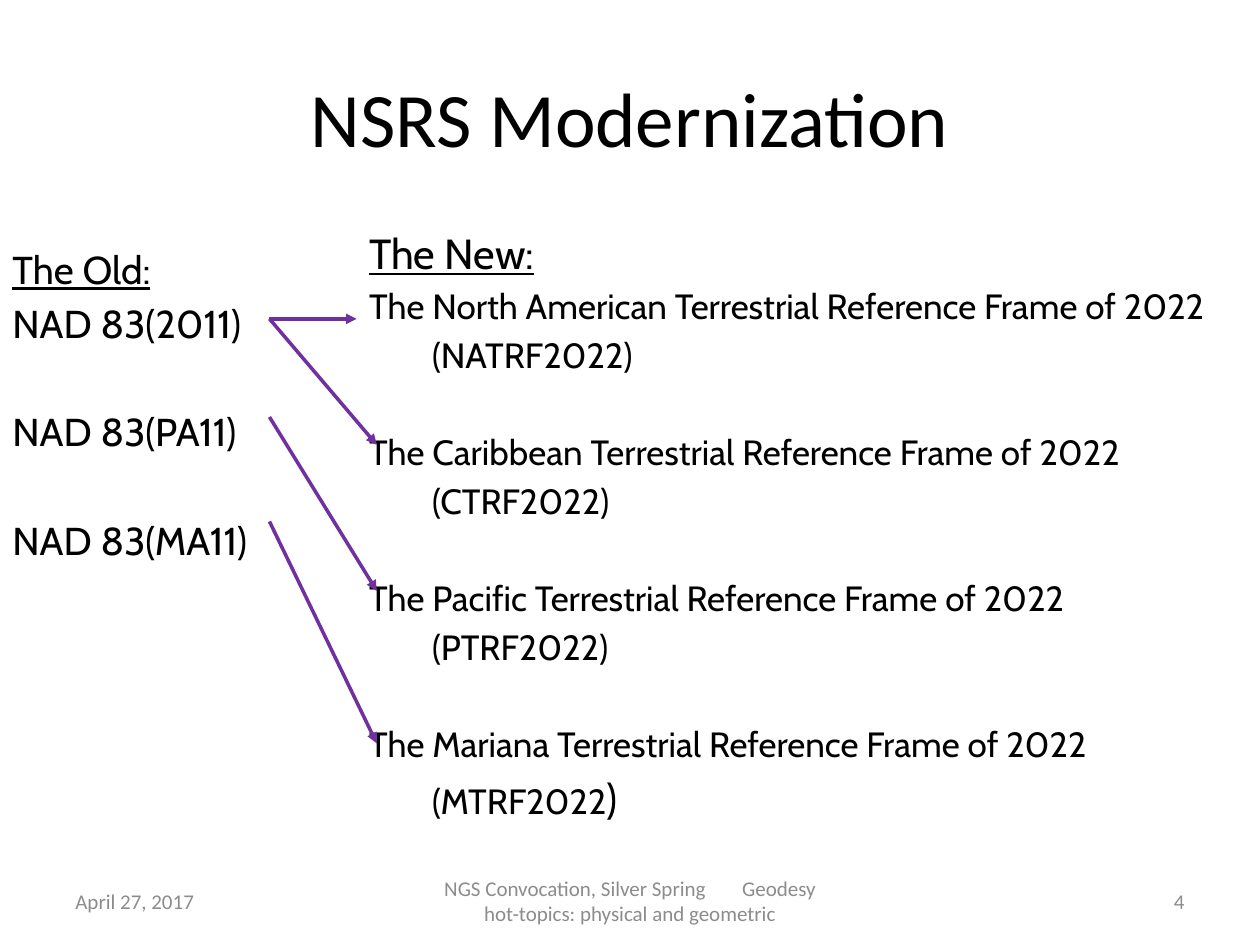
"""Build the NSRS Modernization slide mapping old frames to new ones."""
from dataclasses import dataclass

from lxml.etree import SubElement
from pptx import Presentation
from pptx.dml.color import RGBColor
from pptx.enum.shapes import MSO_CONNECTOR
from pptx.enum.text import MSO_ANCHOR, PP_ALIGN
from pptx.oxml.ns import qn
from pptx.util import Pt

BLACK, GRAY, PURPLE = "000000", "8C8C8C", "7030A0"
HEADING_FONT, BODY_FONT = "Calibri", "Cabin"
FOOTER_TOP, FOOTER_HEIGHT = 500.4, 28.8
ARROW_LEFT = 154


@dataclass(frozen=True)
class Box:
    left: float
    top: float
    width: float
    height: float

    def lengths(self) -> tuple:
        return Pt(self.left), Pt(self.top), Pt(self.width), Pt(self.height)


@dataclass(frozen=True)
class Piece:
    text: str
    size: float
    font: str = BODY_FONT
    color: str = BLACK
    underline: bool = False
    spacing: int = 0


@dataclass(frozen=True)
class Line:
    pieces: tuple[Piece, ...]
    before: float = 0
    align: PP_ALIGN = PP_ALIGN.LEFT


@dataclass(frozen=True)
class Arrow:
    top: float
    end_left: float
    end_top: float


def rgb(color: str) -> RGBColor:
    return RGBColor.from_string(color)


def write_lines(frame, lines: list[Line], anchor: MSO_ANCHOR) -> None:
    frame.word_wrap = True
    frame.vertical_anchor = anchor
    for index, line in enumerate(lines):
        paragraph = frame.add_paragraph() if index else frame.paragraphs[0]
        paragraph.alignment = line.align
        if line.before:
            paragraph.space_before = Pt(line.before)
        for piece in line.pieces:
            run = paragraph.add_run()
            run.text = piece.text
            run.font.name = piece.font
            run.font.size = Pt(piece.size)
            run.font.color.rgb = rgb(piece.color)
            run.font.underline = piece.underline
            if piece.spacing:
                run.font._element.set("spc", str(piece.spacing))


def add_text(slide, box: Box, lines: list[Line],
             anchor: MSO_ANCHOR = MSO_ANCHOR.TOP) -> None:
    write_lines(slide.shapes.add_textbox(*box.lengths()).text_frame, lines, anchor)


def add_arrow(slide, arrow: Arrow) -> None:
    connector = slide.shapes.add_connector(
        MSO_CONNECTOR.STRAIGHT, Pt(ARROW_LEFT), Pt(arrow.top),
        Pt(arrow.end_left), Pt(arrow.end_top))
    connector.line.color.rgb = rgb(PURPLE)
    connector.line.width = Pt(2)
    SubElement(connector.line._get_or_add_ln(), qn("a:tailEnd"), type="triangle")
    SubElement(connector._element.spPr, qn("a:effectLst"))


def old_lines() -> list[Line]:
    size = 22.2
    lines = [Line((Piece("The Old:", size, underline=True),))]
    for index, datum in enumerate(("2011", "PA11", "MA11")):
        before = 35.3 if index else 4.2
        lines.append(Line((Piece(f"NAD 83({datum})", size),), before))
    return lines


def new_lines() -> list[Line]:
    size, large = 20, 24
    regions = ("North American", "Caribbean", "Pacific", "Mariana")
    codes = ("NATRF", "CTRF", "PTRF", "MTRF")
    lines = [Line((Piece("The New:", large, underline=True),))]
    for index, (region, code) in enumerate(zip(regions, codes)):
        name = f"The {region} Terrestrial Reference Frame of 2022"
        last = index == len(codes) - 1
        closing = Piece(")", large if last else size)
        lines.append(Line((Piece(name, size),), 31.7 if index else 3.7))
        lines.append(Line((Piece(f"\t({code}2022", size), closing), 4.5 if last else 3.7))
    return lines


def footer_piece(text: str, spacing: int = 0) -> Piece:
    return Piece(text, 12, HEADING_FONT, GRAY, spacing=spacing)


def add_footer(slide, left: float, width: float, pieces: tuple[Piece, ...],
               align: PP_ALIGN) -> None:
    add_text(slide, Box(left, FOOTER_TOP, width, FOOTER_HEIGHT),
             [Line(pieces, align=align)], MSO_ANCHOR.MIDDLE)


def main() -> None:
    presentation = Presentation()
    presentation.slide_width, presentation.slide_height = Pt(720), Pt(540)
    slide = presentation.slides.add_slide(presentation.slide_layouts[5])

    title = slide.shapes.title
    title.left, title.top, title.width, title.height = Box(36, 21.6, 648, 90).lengths()
    heading = Piece("NSRS Modernization", 44, HEADING_FONT)
    write_lines(title.text_frame, [Line((heading,), align=PP_ALIGN.CENTER)],
                MSO_ANCHOR.MIDDLE)

    add_text(slide, Box(0, 136.8, 215.3, 185.8), old_lines())
    add_text(slide, Box(203.8, 126.7, 498.2, 378), new_lines())

    add_footer(slide, 36, 168, (footer_piece("April 27, 2017"),), PP_ALIGN.LEFT)
    event = (footer_piece("NGS Convocation, Silver Spring"),
             footer_piece(" ", 1800),
             footer_piece("Geodesy hot-topics: physical and geometric"))
    add_footer(slide, 246, 228, event, PP_ALIGN.CENTER)
    add_footer(slide, 516, 168, (footer_piece("4"),), PP_ALIGN.RIGHT)

    for arrow in (Arrow(182.2, 203.8, 182.2), Arrow(182.2, 215.3, 254.2),
                  Arrow(238.3, 215.3, 337.7), Arrow(298, 215.3, 424.8)):
        add_arrow(slide, arrow)

    presentation.save("out.pptx")


if __name__ == "__main__":
    main()
